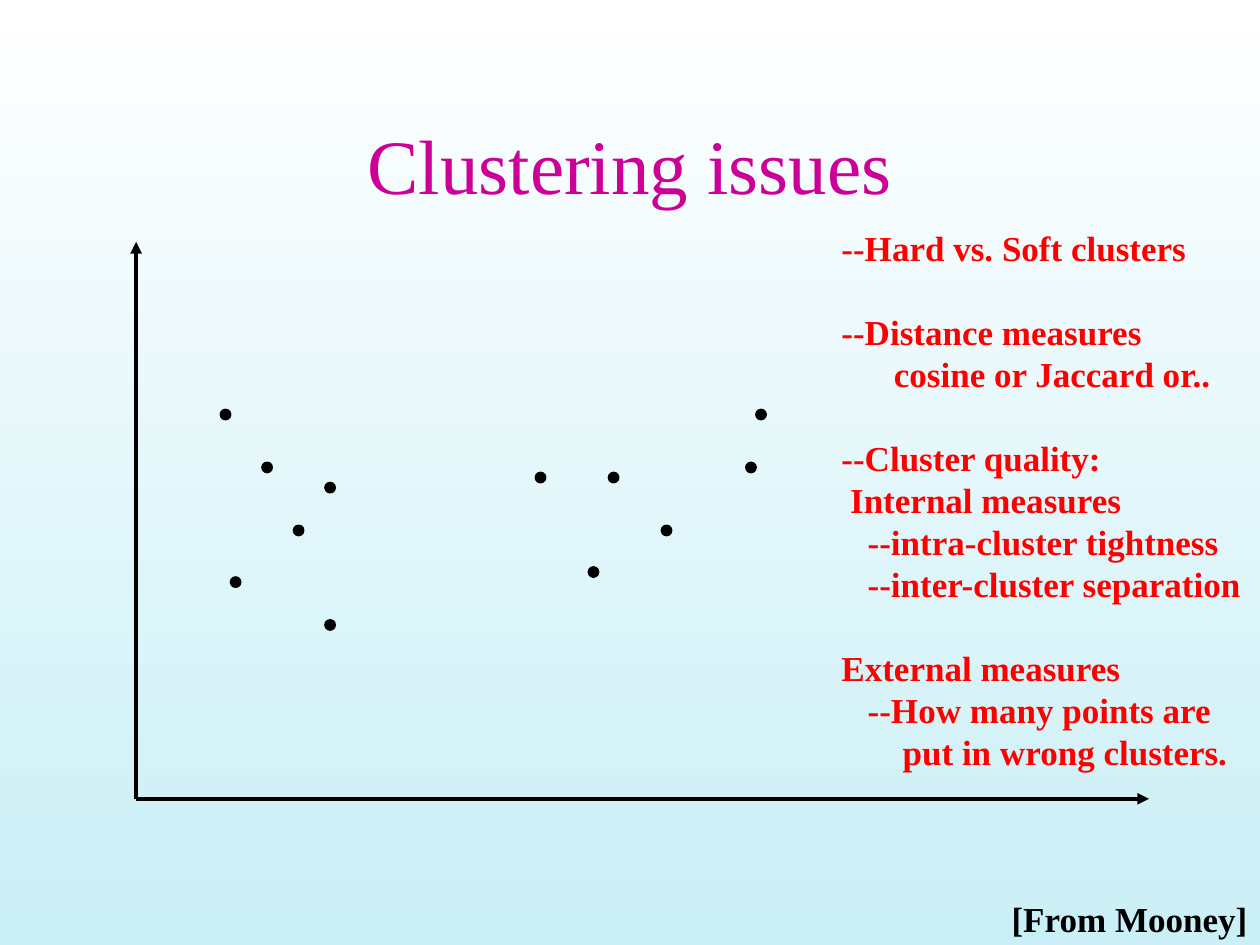
from typing import NamedTuple

import pptx
import pptx.dml.color
import pptx.enum.shapes
import pptx.enum.text
import pptx.oxml
import pptx.oxml.ns
import pptx.util
from pptx.util import Inches

FONT = "Times New Roman"
BLACK, RED, MAGENTA = "000000", "FF0000", "CC0099"
DOT_SIZE = 0.08
SPACE = 5 / 72  # width of one space at 20 pt, in inches


class Line(NamedTuple):
    text: str
    indent: int = 0  # in spaces
    new_group: bool = False


class Point(NamedTuple):
    x: float
    y: float


ISSUES = [
    Line("--Hard vs. Soft clusters"),
    Line("--Distance measures", new_group=True),
    Line("cosine or Jaccard or..", 6),
    Line("--Cluster quality:", new_group=True),
    Line("Internal measures", 1),
    Line("--intra-cluster tightness", 3),
    Line("--inter-cluster separation", 3),
    Line("External measures", new_group=True),
    Line("--How many points are", 3),
    Line("put in wrong clusters.", 7),
]

# Top left corner of each dot
LEFT_CLUSTER = [Point(1.75, 3.25), Point(2.08, 3.67), Point(2.58, 3.83),
                Point(2.33, 4.17), Point(1.83, 4.58), Point(2.58, 4.92)]
RIGHT_CLUSTER = [Point(6, 3.25), Point(5.92, 3.67), Point(4.25, 3.75),
                 Point(4.83, 3.75), Point(5.25, 4.17), Point(4.67, 4.5)]

ORIGIN = Point(1.08, 6.34)
AXIS_ENDS = [Point(1.08, 1.92), Point(9.12, 6.34)]


def colour(value: str) -> pptx.dml.color.RGBColor:
    return pptx.dml.color.RGBColor.from_string(value)


def add_text(page, left: float, top: float, width: float, height: float,
             lines: list[Line], size: int, ink: str, bold: bool = True,
             wrap: bool = True):
    box = page.shapes.add_textbox(Inches(left), Inches(top),
                                  Inches(width), Inches(height))
    frame = box.text_frame
    frame.word_wrap = wrap
    line_height = pptx.util.Pt(size * 1.2)
    for number, line in enumerate(lines):
        para = frame.add_paragraph() if number else frame.paragraphs[0]
        para.line_spacing = line_height
        if line.new_group:
            para.space_before = line_height
        if line.indent:
            para._p.get_or_add_pPr().set("marL", str(Inches(line.indent * SPACE)))
        span = para.add_run()
        span.text = line.text
        span.font.name = FONT
        span.font.size = pptx.util.Pt(size)
        span.font.bold = bold
        span.font.color.rgb = colour(ink)
    return box


def add_axis(page, start: Point, end: Point) -> None:
    axis = page.shapes.add_connector(
        pptx.enum.shapes.MSO_CONNECTOR.STRAIGHT,
        Inches(start.x), Inches(start.y), Inches(end.x), Inches(end.y))
    axis.line.color.rgb = colour(BLACK)
    axis.line.width = pptx.util.Pt(2.25)
    arrow = pptx.oxml.parse_xml(
        f'<a:tailEnd {pptx.oxml.ns.nsdecls("a")} type="triangle"/>')
    axis.line._get_or_add_ln().append(arrow)
    axis._element.spPr.append(
        pptx.oxml.parse_xml(f'<a:effectLst {pptx.oxml.ns.nsdecls("a")}/>'))


def add_dot(page, corner: Point) -> None:
    dot = page.shapes.add_shape(
        pptx.enum.shapes.MSO_SHAPE.OVAL, Inches(corner.x), Inches(corner.y),
        Inches(DOT_SIZE), Inches(DOT_SIZE))
    dot.shadow.inherit = False
    dot.fill.solid()
    dot.fill.fore_color.rgb = colour(BLACK)
    dot.line.color.rgb = colour(BLACK)
    dot.line.width = pptx.util.Pt(1)


def main() -> None:
    deck = pptx.Presentation()
    deck.slide_width, deck.slide_height = Inches(10), Inches(7.5)
    page = deck.slides.add_slide(deck.slide_layouts[6])

    # Background, white at the top
    fill = page.background.fill
    fill.gradient()
    fill.gradient_angle = 270
    for stop, value in zip(fill.gradient_stops, ("FFFFFF", "CAEFF6")):
        stop.color.rgb = colour(value)

    # Title
    title = add_text(page, 0.75, 0.67, 8.5, 1.25, [Line("Clustering issues")],
                     44, MAGENTA, bold=False)
    title.text_frame.vertical_anchor = pptx.enum.text.MSO_ANCHOR.MIDDLE
    heading = title.text_frame.paragraphs[0]
    heading.alignment = pptx.enum.text.PP_ALIGN.CENTER
    heading.line_spacing = 1.0

    # Scatter diagram
    for end in AXIS_ENDS:
        add_axis(page, ORIGIN, end)
    for corner in LEFT_CLUSTER + RIGHT_CLUSTER:
        add_dot(page, corner)

    # Credit and list of issues
    add_text(page, 7.93, 7.07, 2.07, 0.43, [Line("[From Mooney]")],
             20, BLACK, wrap=False)
    add_text(page, 6.58, 1.75, 3.37, 4.43, ISSUES, 20, RED)

    deck.save("out.pptx")


if __name__ == "__main__":
    main()
